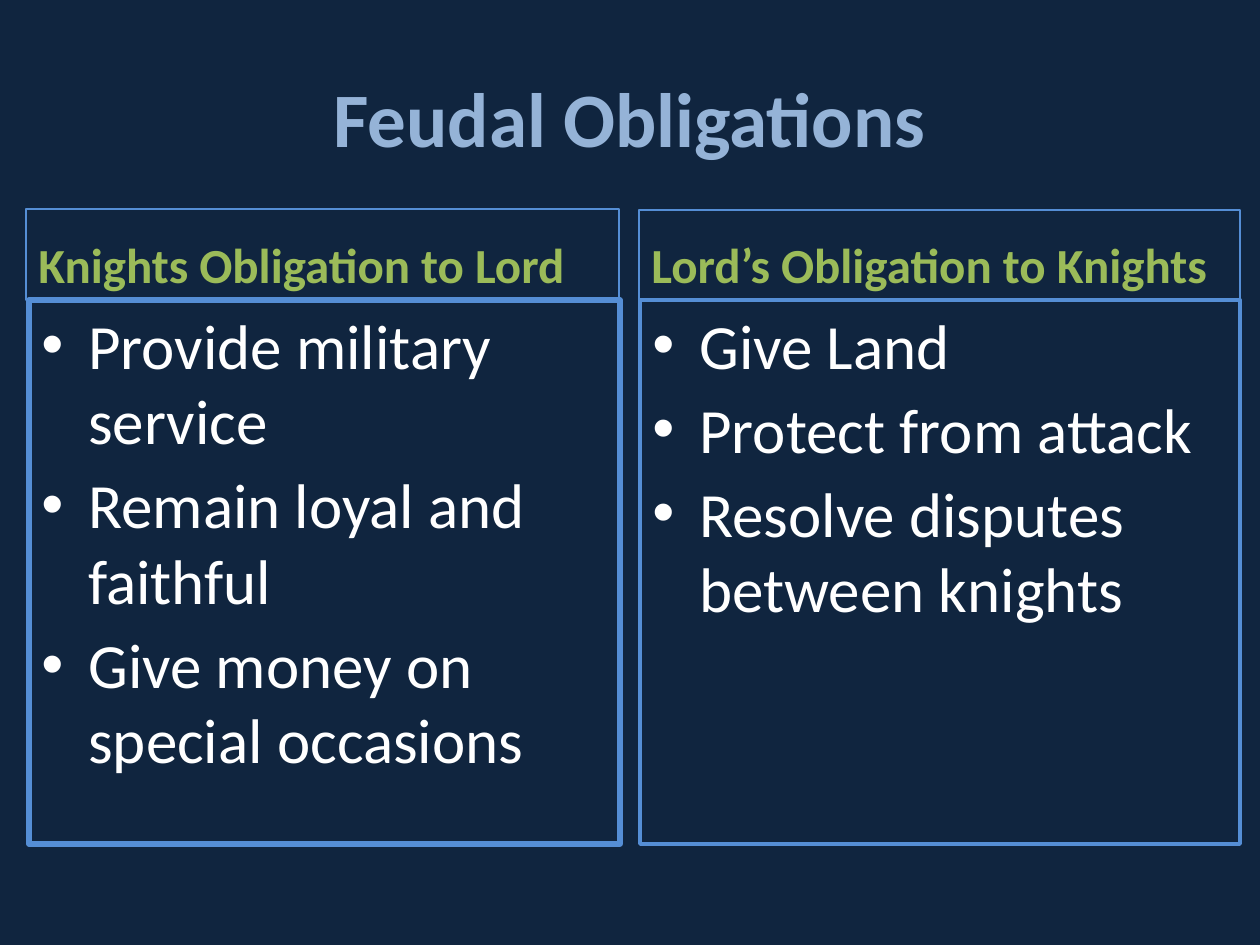
from lxml import etree
from pptx import Presentation
from pptx.dml.color import RGBColor
from pptx.enum.shapes import MSO_SHAPE
from pptx.enum.text import MSO_ANCHOR, PP_ALIGN
from pptx.oxml.ns import qn
from pptx.util import Pt

EMU_PER_PX = 914400 / 126
RECTANGLE = MSO_SHAPE.RECTANGLE
TOP, MIDDLE, BOTTOM = MSO_ANCHOR.TOP, MSO_ANCHOR.MIDDLE, MSO_ANCHOR.BOTTOM
LEFT, CENTER = PP_ALIGN.LEFT, PP_ALIGN.CENTER

NAVY = RGBColor(0x10, 0x25, 0x3F)
PALE_BLUE = RGBColor(0x95, 0xB3, 0xD7)
BORDER_BLUE = RGBColor(0x55, 0x8E, 0xD5)
GREEN = RGBColor(0x9B, 0xBB, 0x59)
WHITE = RGBColor(0xFF, 0xFF, 0xFF)
FONT = "Calibri"
BULLET_INDENT = 47


def px(length):
    return round(length * EMU_PER_PX)


def write_text(shape, lines, size, color, bold, anchor, alignment):
    text_frame = shape.text_frame
    text_frame.text = "\n".join(lines)
    text_frame.word_wrap = True
    text_frame.vertical_anchor = anchor
    for paragraph in text_frame.paragraphs:
        paragraph.alignment = alignment
        font = paragraph.runs[0].font
        font.name = FONT
        font.size = Pt(size)
        font.bold = bold
        font.color.rgb = color


presentation = Presentation()
presentation.slide_width = px(1260)
presentation.slide_height = px(945)
slide = presentation.slides.add_slide(presentation.slide_layouts[6])
slide.background.fill.solid()
slide.background.fill.fore_color.rgb = NAVY

title = slide.shapes.add_textbox(px(63), px(38), px(1134), px(158))
write_text(title, ["Feudal Obligations"], 44, PALE_BLUE, True, MIDDLE, CENTER)

columns = [
    ("Knights Obligation to Lord", (26, 209, 593, 91), (29, 300, 591, 544), 3,
     ["Provide military service", "Remain loyal and faithful",
      "Give money on special occasions"]),
    ("Lord’s Obligation to Knights", (639, 210, 601, 90), (640, 300, 600, 544), 2.25,
     ["Give Land", "Protect from attack", "Resolve disputes between knights"]),
]

for heading, heading_box, list_box, list_border, duties in columns:
    panels = [
        (heading_box, 0.75, [heading], 28, GREEN, True, BOTTOM),
        (list_box, list_border, duties, 36, WHITE, False, TOP),
    ]
    for box, border, lines, size, color, bold, anchor in panels:
        panel = slide.shapes.add_shape(RECTANGLE, *map(px, box))
        panel.shadow.inherit = False
        panel.fill.background()
        panel.line.color.rgb = BORDER_BLUE
        panel.line.width = Pt(border)
        write_text(panel, lines, size, color, bold, anchor, LEFT)

    for index, paragraph in enumerate(panel.text_frame.paragraphs):
        paragraph.space_before = Pt(4.8 if index else 0)
        properties = paragraph._p.get_or_add_pPr()
        properties.set("marL", str(px(BULLET_INDENT)))
        properties.set("indent", str(-px(BULLET_INDENT)))
        bullet_font = etree.SubElement(properties, qn("a:buFont"))
        bullet_font.set("typeface", "Arial")
        bullet = etree.SubElement(properties, qn("a:buChar"))
        bullet.set("char", "•")

presentation.save("out.pptx")
